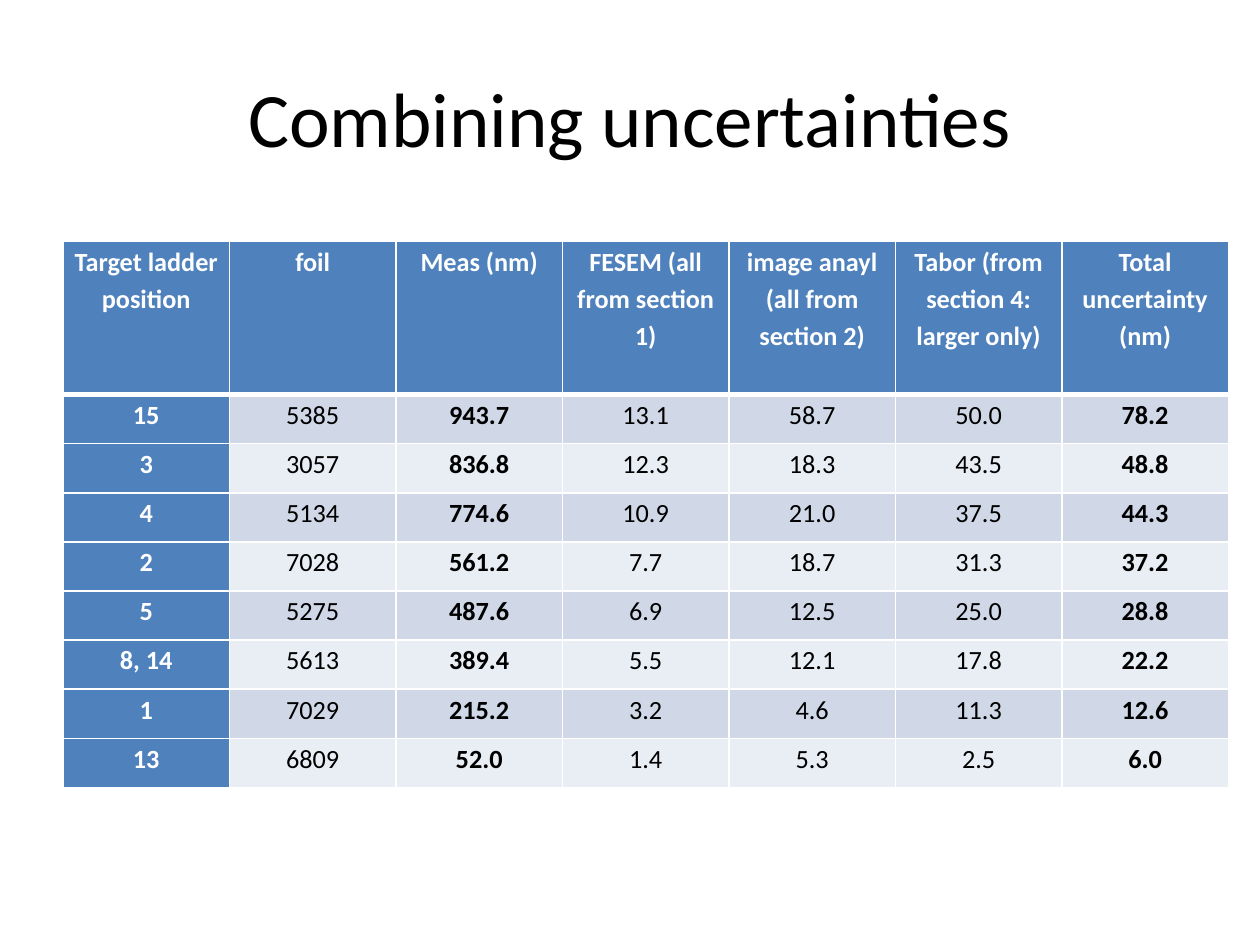
from dataclasses import dataclass

from lxml.etree import SubElement as Sub
from pptx import Presentation
from pptx.dml.color import RGBColor as RGB
from pptx.enum.text import MSO_ANCHOR as Anchor, PP_ALIGN as Align
from pptx.oxml.ns import qn
from pptx.util import Pt


@dataclass(frozen=True)
class Theme:
    font: str = "Calibri"
    title: int = 44
    body: int = 15
    ink: str = "000000"
    white: str = "FFFFFF"
    head: str = "4F81BD"
    bands: tuple = ("D0D8E8", "E9EDF4")
    thin: int = 1
    thick: int = 3


class Deck:
    def __init__(self, theme):
        self.theme = theme
        self.prs = Presentation()
        self.prs.slide_width, self.prs.slide_height = Pt(720), Pt(540)
        self.slide = self.prs.slides.add_slide(self.prs.slide_layouts[5])

    def style(self, para, size, color, bold=False):
        para.alignment = Align.CENTER
        for run in para.runs:
            font = run.font
            font.name, font.size, font.bold = self.theme.font, Pt(size), bold
            font.color.rgb = RGB.from_string(color)

    def title(self, text, left, top, width, height):
        box = self.slide.shapes.title
        box.left, box.top = Pt(left), Pt(top)
        box.width, box.height = Pt(width), Pt(height)
        frame = box.text_frame
        frame.text = text
        frame.vertical_anchor = Anchor.MIDDLE
        self.style(frame.paragraphs[0], self.theme.title, self.theme.ink)

    def edge(self, cell, side, width):
        props = cell._tc.get_or_add_tcPr()
        line = Sub(props, qn(f"a:ln{side}"), w=str(Pt(width)))
        fill = Sub(line, qn("a:solidFill"))
        Sub(fill, qn("a:srgbClr"), val=self.theme.white)

    def cell(self, cell, text, row, col, bold_cols):
        t = self.theme
        head = row == 0 or col == 0
        # Borders come before the fill in the cell's XML
        for side in "LRTB":
            heavy = (row, side) in ((0, "B"), (1, "T"))
            self.edge(cell, side, t.thick if heavy else t.thin)
        cell.fill.solid()
        shade = t.head if head else t.bands[(row - 1) % 2]
        cell.fill.fore_color.rgb = RGB.from_string(shade)
        cell.margin_left = cell.margin_right = Pt(5)
        cell.margin_top = cell.margin_bottom = 0
        cell.vertical_anchor = Anchor.TOP
        cell.text_frame.text = text
        para = cell.text_frame.paragraphs[0]
        para.line_spacing = 1.15
        self.style(para, t.body, t.white if head else t.ink,
                   head or col in bold_cols)

    def table(self, data, left, top, width, head_h, row_h, bold_cols):
        rows, cols = len(data), len(data[0])
        height = head_h + row_h * (rows - 1)
        table = self.slide.shapes.add_table(
            rows, cols, Pt(left), Pt(top), Pt(width), Pt(height)).table
        for col in table.columns:
            col.width = Pt(width / cols)
        for r, values in enumerate(data):
            table.rows[r].height = Pt(row_h if r else head_h)
            for c, text in enumerate(values):
                self.cell(table.cell(r, c), text, r, c, bold_cols)

    def save(self):
        self.prs.save("out.pptx")


HEADS = ("Target ladder position", "foil", "Meas (nm)",
         "FESEM (all from section 1)", "image anayl (all from section 2)",
         "Tabor (from section 4: larger only)", "Total uncertainty (nm)")
FOILS = (
    ("15", "5385", "943.7", "13.1", "58.7", "50.0", "78.2"),
    ("3", "3057", "836.8", "12.3", "18.3", "43.5", "48.8"),
    ("4", "5134", "774.6", "10.9", "21.0", "37.5", "44.3"),
    ("2", "7028", "561.2", "7.7", "18.7", "31.3", "37.2"),
    ("5", "5275", "487.6", "6.9", "12.5", "25.0", "28.8"),
    ("8, 14", "5613", "389.4", "5.5", "12.1", "17.8", "22.2"),
    ("1", "7029", "215.2", "3.2", "4.6", "11.3", "12.6"),
    ("13", "6809", "52.0", "1.4", "5.3", "2.5", "6.0"),
)


def main():
    deck = Deck(Theme())
    # Heading
    deck.title("Combining uncertainties", 36, 21.6, 648, 90)
    # Uncertainty table: measured and total columns are bold
    deck.table((HEADS, *FOILS), left=36, top=138, width=666,
               head_h=87.5, row_h=28.08, bold_cols=(2, 6))
    deck.save()


if __name__ == "__main__":
    main()
